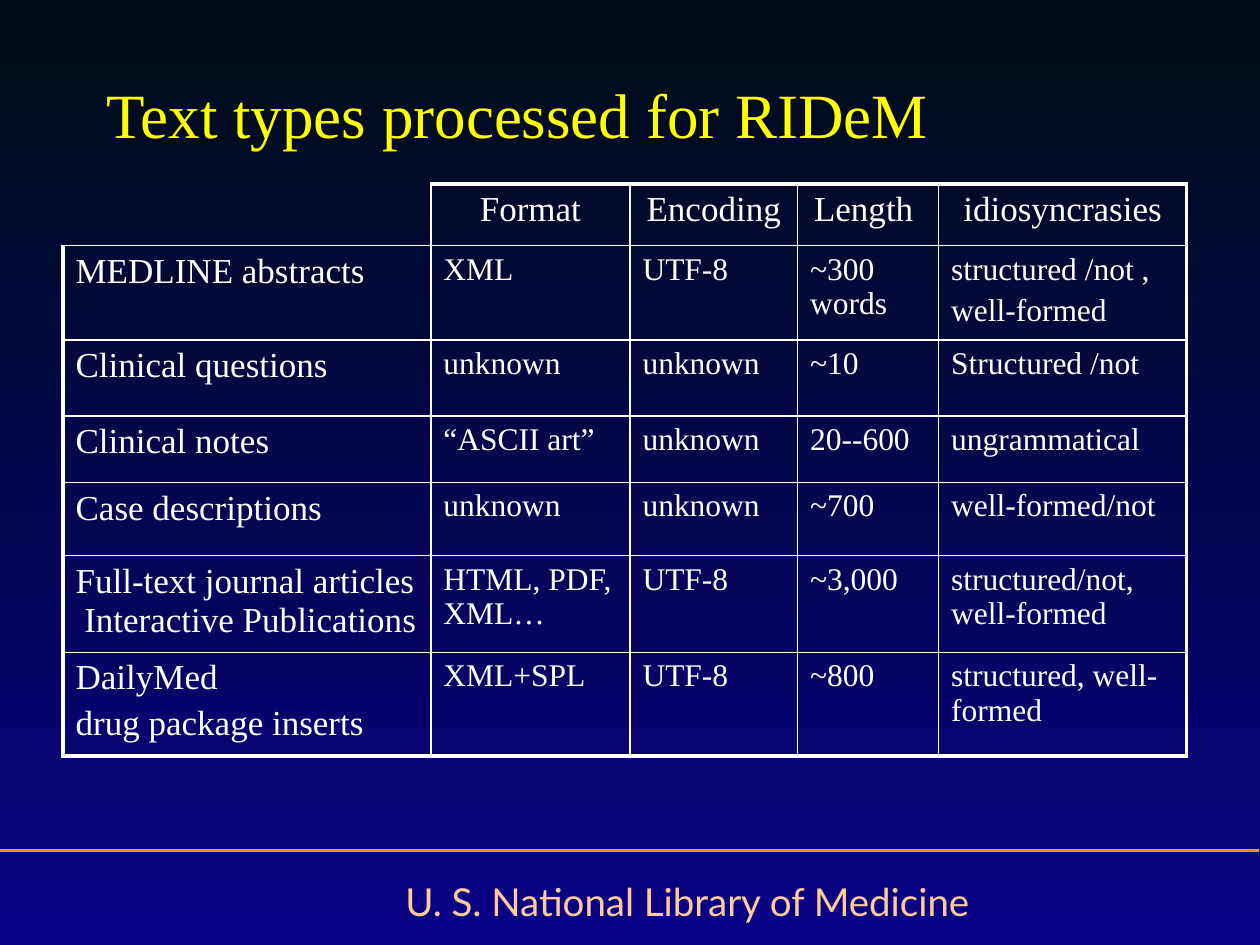
"""Build the slide that lists the text types processed for RIDeM."""
from dataclasses import dataclass

from lxml.etree import SubElement
from pptx import Presentation
from pptx.dml.color import RGBColor
from pptx.enum.shapes import MSO_CONNECTOR
from pptx.enum.text import MSO_ANCHOR, PP_ALIGN
from pptx.oxml.ns import qn
from pptx.slide import Slide
from pptx.table import _Cell
from pptx.text.text import TextFrame
from pptx.util import Inches, Pt


@dataclass(frozen=True)
class Theme:
    top: str = "000D14"
    base: str = "0A0086"
    rule: str = "FF9900"
    foot: str = "FFCC99"
    title: str = "FFFF00"
    ink: str = "FFFFFF"
    serif: str = "Times New Roman"
    sans: str = "Lato"
    title_size: int = 36
    foot_size: int = 22
    head_size: int = 20
    cell_size: int = 18
    thick: float = 2.25
    thin: float = 1


@dataclass(frozen=True)
class Style:
    name: str
    size: int
    tint: str
    align: PP_ALIGN = PP_ALIGN.LEFT


@dataclass(frozen=True)
class Label:
    text: str
    box: tuple[float, float, float, float]
    style: Style
    anchor: MSO_ANCHOR


THEME = Theme()
HEAD = Style(THEME.serif, THEME.head_size, THEME.ink, PP_ALIGN.CENTER)
SIDE = Style(THEME.serif, THEME.head_size, THEME.ink)
BODY = Style(THEME.serif, THEME.cell_size, THEME.ink)

LABELS = (
    Label("U. S. National Library of Medicine", (2.32, 6.92, 6.27, 0.47),
          Style(THEME.sans, THEME.foot_size, THEME.foot, PP_ALIGN.CENTER), MSO_ANCHOR.TOP),
    Label("Text types processed for RIDeM", (0.75, 0.5, 8.5, 0.75),
          Style(THEME.serif, THEME.title_size, THEME.title), MSO_ANCHOR.BOTTOM),
)

WIDTHS = (2.92, 1.58, 1.33, 1.12, 1.97)
HEIGHTS = (0.49, 0.59, 0.6, 0.53, 0.58, 0.63, 0.8)
ROWS = (
    ("", "Format", "Encoding", "Length ", "idiosyncrasies"),
    ("MEDLINE abstracts", "XML", "UTF-8", "~300 words", "structured /not ,\nwell-formed"),
    ("Clinical questions", "unknown", "unknown", "~10", "Structured /not"),
    ("Clinical notes", "“ASCII art”", "unknown", "20--600", "ungrammatical"),
    ("Case descriptions", "unknown", "unknown", "~700", "well-formed/not"),
    ("Full-text journal articles\v Interactive Publications", "HTML, PDF, XML…", "UTF-8",
     "~3,000", "structured/not, well-formed"),
    ("DailyMed\ndrug package inserts", "XML+SPL", "UTF-8", "~800", "structured, well-formed"),
)


def write(frame: TextFrame, text: str, style: Style) -> None:
    frame.text = text
    look = {"name": style.name, "size": Pt(style.size)}
    for spot, para in enumerate(frame.paragraphs):
        para.alignment = style.align
        if spot:
            para.space_before = Pt(style.size * 0.2)
        for run in para.runs:
            for key, value in look.items():
                setattr(run.font, key, value)
            run.font.color.rgb = RGBColor.from_string(style.tint)


def draw_label(slide: Slide, label: Label) -> None:
    frame = slide.shapes.add_textbox(*map(Inches, label.box)).text_frame
    for key, value in {"word_wrap": True, "vertical_anchor": label.anchor}.items():
        setattr(frame, key, value)
    write(frame, label.text, label.style)


def draw_rule(slide: Slide) -> None:
    ends = map(Inches, (-0.01, 6.75, 9.99, 6.75))
    rule = slide.shapes.add_connector(MSO_CONNECTOR.STRAIGHT, *ends)
    rule.line.color.rgb = RGBColor.from_string(THEME.rule)
    rule.line.width = Pt(1.5)
    SubElement(rule._element.spPr, qn("a:effectLst"))


def draw_edge(cell: _Cell, side: str, width: float) -> None:
    edge = SubElement(cell._tc.get_or_add_tcPr(), qn(f"a:ln{side}"), w=str(Pt(width)))
    if width:
        fill = SubElement(edge, qn("a:solidFill"))
        SubElement(fill, qn("a:srgbClr"), val=THEME.ink)
    else:
        SubElement(edge, qn("a:noFill"))


def frame_cell(cell: _Cell, row: int, col: int) -> None:
    outer = {"L": col == 0, "R": col == len(WIDTHS) - 1,
             "T": row == 0, "B": row == len(HEIGHTS) - 1}
    rim = THEME.thick if row or col else 0
    for side, is_rim in outer.items():
        draw_edge(cell, side, rim if is_rim else THEME.thin)
    cell.fill.background()


def draw_table(slide: Slide) -> None:
    size = (sum(WIDTHS), sum(HEIGHTS))
    table = slide.shapes.add_table(len(HEIGHTS), len(WIDTHS),
                                   *map(Inches, (0.5, 1.46, *size))).table
    for key in ("first_row", "horz_banding"):
        setattr(table, key, False)
    for line, width in zip(table.columns, WIDTHS):
        line.width = Inches(width)
    for line, height in zip(table.rows, HEIGHTS):
        line.height = Inches(height)
    for row, texts in enumerate(ROWS):
        for col, text in enumerate(texts):
            cell = table.cell(row, col)
            style = HEAD if row == 0 else BODY if col else SIDE
            write(cell.text_frame, text, style)
            frame_cell(cell, row, col)


def paint(slide: Slide) -> None:
    fill = slide.background.fill
    fill.gradient()
    fill.gradient_angle = 270
    for stop, place, tint in zip(fill.gradient_stops, (0, 1), (THEME.top, THEME.base)):
        stop.position = place
        stop.color.rgb = RGBColor.from_string(tint)


def main() -> None:
    deck = Presentation()
    for key, value in {"slide_width": 10, "slide_height": 7.5}.items():
        setattr(deck, key, Inches(value))
    slide = deck.slides.add_slide(deck.slide_layouts[6])
    paint(slide)
    draw_rule(slide)
    for label in LABELS:
        draw_label(slide, label)
    draw_table(slide)
    deck.save("out.pptx")


if __name__ == "__main__":
    main()
